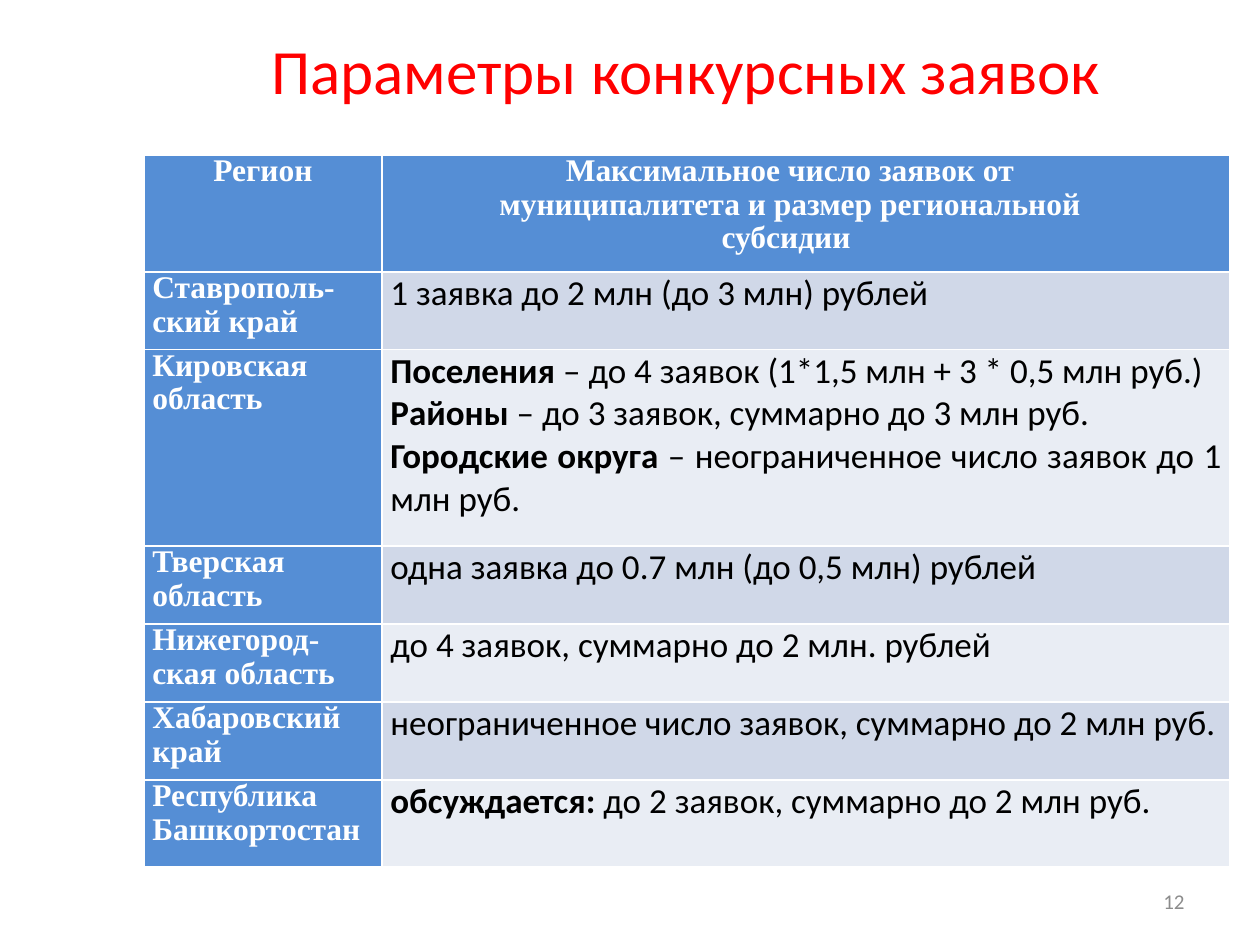
"""Build the slide on the parameters of competition applications by region."""
from dataclasses import dataclass

from pptx import Presentation
from pptx.dml.color import RGBColor
from pptx.enum import text as t
from pptx.util import Cm, Pt

TITLE = "Параметры конкурсных заявок "
PAGE_NUMBER = "12"
HEADERS = (
    "Регион",
    "Максимальное число заявок от муниципалитета и размер региональной субсидии ",
)
REGIONS = [
    ("Ставрополь-ский край", [("", "1 заявка до 2 млн (до 3 млн) рублей ")]),
    ("Кировская область", [
        ("Поселения", " – до 4 заявок (1*1,5 млн + 3 * 0,5 млн руб.)"),
        ("Районы", " – до 3 заявок, суммарно до 3 млн руб."),
        ("Городские округа", " – неограниченное число заявок до 1 млн руб."),
    ]),
    ("Тверская область", [("", "одна заявка до 0.7 млн (до 0,5 млн) рублей")]),
    ("Нижегород-ская область", [("", "до 4 заявок, суммарно до 2 млн. рублей")]),
    ("Хабаровский край", [("", "неограниченное число заявок, суммарно до 2 млн руб.")]),
    ("Республика Башкортостан", [
        ("обсуждается:", " до 2 заявок, суммарно до 2 млн руб. "),
    ]),
]
COLUMN_WIDTHS = (4.8, 17.1)
ROW_HEIGHTS = (2.36, 1.57, 3.96, 1.57, 1.57, 1.57, 1.75)
CELL_MARGIN = 0.17
HEADER_MARGINS = (1.42, 2.07)


@dataclass(frozen=True)
class Theme:
    body_font: str = "Calibri"
    label_font: str = "Times New Roman"
    title_color: str = "FF0000"
    label_color: str = "FFFFFF"
    body_color: str = "000000"
    number_color: str = "8C8C8C"
    label_fill: str = "558ED5"
    bands: tuple = ("D0D8E8", "E9EDF4")
    title_size: int = 36
    body_size: int = 20
    label_size: int = 18
    number_size: int = 12


THEME = Theme()
ALIGN = t.PP_ALIGN
LABEL = dict(font=THEME.label_font, size=THEME.label_size,
             color=THEME.label_color, spacing=0.96)
BODY = dict(size=THEME.body_size, color=THEME.body_color, align=ALIGN.JUSTIFY)


def write(frame, paragraphs, *, size, color, font=THEME.body_font,
          align=ALIGN.LEFT, spacing=None):
    """Fill a text frame with paragraphs given as (bold, plain) pairs."""
    for index, parts in enumerate(paragraphs):
        paragraph = frame.add_paragraph() if index else frame.paragraphs[0]
        paragraph.alignment = align
        paragraph.line_spacing = spacing
        for part, bold in zip(parts, (True, False)):
            if part:
                run = paragraph.add_run()
                run.text = part
                run.font.name = font
                run.font.size = Pt(size)
                run.font.bold = bold
                run.font.color.rgb = RGBColor.from_string(color)


def add_label(slide, box, content, **style):
    """Add a vertically centred text box."""
    frame = slide.shapes.add_textbox(*map(Cm, box)).text_frame
    frame.word_wrap = True
    frame.vertical_anchor = t.MSO_ANCHOR.MIDDLE
    write(frame, [("", content)], **style)


def fill_cell(cell, paragraphs, fill, margins=(CELL_MARGIN, CELL_MARGIN), **style):
    """Set the margins, fill and text of one table cell."""
    cell.margin_left, cell.margin_right = map(Cm, margins)
    cell.margin_top = cell.margin_bottom = 0
    cell.fill.solid()
    cell.fill.fore_color.rgb = RGBColor.from_string(fill)
    write(cell.text_frame, paragraphs, **style)


def add_region_table(slide):
    """Add the table of regions and their limits."""
    table = slide.shapes.add_table(
        len(ROW_HEIGHTS), len(COLUMN_WIDTHS), Cm(2.9), Cm(3.12),
        Cm(sum(COLUMN_WIDTHS)), Cm(sum(ROW_HEIGHTS))).table
    for column, width in zip(table.columns, COLUMN_WIDTHS):
        column.width = Cm(width)
    for row, height in zip(table.rows, ROW_HEIGHTS):
        row.height = Cm(height)

    margins = ((CELL_MARGIN, CELL_MARGIN), HEADER_MARGINS)
    for column, header in enumerate(HEADERS):
        fill_cell(table.cell(0, column), [(header, "")], THEME.label_fill,
                  margins[column], align=ALIGN.CENTER, **LABEL)
    for row, (region, limits) in enumerate(REGIONS, start=1):
        fill_cell(table.cell(row, 0), [(region, "")], THEME.label_fill,
                  align=ALIGN.JUSTIFY, **LABEL)
        fill_cell(table.cell(row, 1), limits, THEME.bands[(row - 1) % 2], **BODY)


def main():
    """Assemble and save the presentation."""
    presentation = Presentation()
    presentation.slide_width, presentation.slide_height = Cm(25.4), Cm(19.05)
    slide = presentation.slides.add_slide(presentation.slide_layouts[6])
    add_label(slide, (2.54, 0.33, 22.86, 2.13), TITLE, size=THEME.title_size,
              color=THEME.title_color, align=ALIGN.CENTER)
    add_region_table(slide)
    add_label(slide, (18.2, 17.65, 5.93, 1.02), PAGE_NUMBER, size=THEME.number_size,
              color=THEME.number_color, align=ALIGN.RIGHT)
    presentation.save("out.pptx")


if __name__ == "__main__":
    main()
